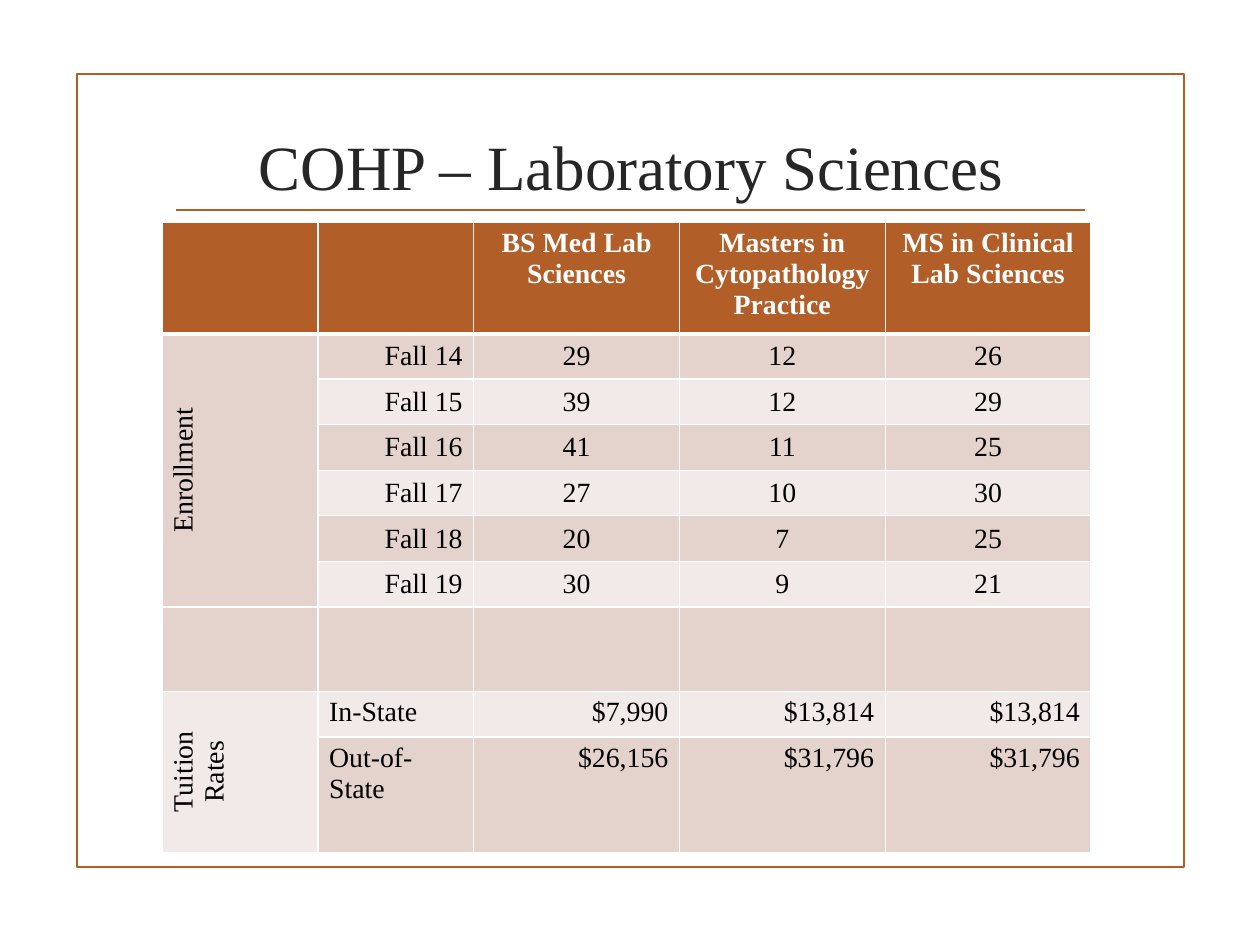
from dataclasses import dataclass

from lxml import etree
from pptx import Presentation
from pptx.dml import color
from pptx.enum import shapes, text
from pptx.oxml import ns
from pptx.util import Inches, Pt

LEFT, MID, RIGHT = text.PP_ALIGN.LEFT, text.PP_ALIGN.CENTER, text.PP_ALIGN.RIGHT
TOP, CENTER = text.MSO_ANCHOR.TOP, text.MSO_ANCHOR.MIDDLE


@dataclass(frozen=True)
class Theme:
    font: str = "Times New Roman"
    rust: str = "B15E28"
    rose: str = "E4D2CD"
    pale: str = "F2EAE8"
    white: str = "FFFFFF"
    black: str = "000000"
    ink: str = "262626"
    title: float = 40.8
    body: float = 18
    line: float = 1.25
    thin: float = 1
    thick: float = 3


@dataclass(frozen=True)
class Row:
    cells: tuple[str, ...]
    height: float
    label: text.PP_ALIGN = LEFT
    value: text.PP_ALIGN = MID
    anchor: text.MSO_ANCHOR = TOP


@dataclass(frozen=True)
class Group:
    name: str
    first: int
    last: int


THEME = Theme()
COLS = (1.4, 1.4, 1.85, 1.85, 1.85)
FALLS = (
    ("Fall 14", "29", "12", "26"),
    ("Fall 15", "39", "12", "29"),
    ("Fall 16", "41", "11", "25"),
    ("Fall 17", "27", "10", "30"),
    ("Fall 18", "20", "7", "25"),
    ("Fall 19", "30", "9", "21"),
)
ROWS = (
    Row(("", "BS Med Lab Sciences", "Masters in Cytopathology Practice",
         "MS in Clinical Lab Sciences"), 0.93),
    *(Row(fall, 0.41, RIGHT, MID, CENTER) for fall in FALLS),
    Row(("", "", "", ""), 0.76),
    Row(("In-State", "$7,990", "$13,814", "$13,814"), 0.41, value=RIGHT),
    Row(("Out-of-State", "$26,156", "$31,796", "$31,796"), 1.03, value=RIGHT),
)
GROUPS = (Group("Enrollment", 1, 6), Group("Tuition Rates", 8, 9))


def rgb(code: str) -> color.RGBColor:
    return color.RGBColor.from_string(code)


def style(para, align: text.PP_ALIGN, size: float, ink: str, bold: bool = False) -> None:
    para.alignment = align
    for run in para.runs:
        run.font.name = THEME.font
        run.font.size = Pt(size)
        run.font.bold = bold
        run.font.color.rgb = rgb(ink)


def rule(line) -> None:
    line.color.rgb = rgb(THEME.rust)
    line.width = Pt(THEME.line)


def border(cell, side: str, width: float) -> None:
    props = cell._tc.get_or_add_tcPr()
    edge = etree.SubElement(props, ns.qn(f"a:ln{side}"), w=str(Pt(width)))
    fill = etree.SubElement(edge, ns.qn("a:solidFill"))
    etree.SubElement(fill, ns.qn("a:srgbClr"), val=THEME.white)


def shade(cell, row: int) -> None:
    for side in "LRTB":
        heavy = (row, side) in ((0, "B"), (1, "T"))
        border(cell, side, THEME.thick if heavy else THEME.thin)
    cell.fill.solid()
    tint = THEME.rose if row % 2 else THEME.pale
    if row == 0:
        tint = THEME.rust
    cell.fill.fore_color.rgb = rgb(tint)


def write(cell, words: str, align: text.PP_ALIGN, anchor: text.MSO_ANCHOR,
          head: bool = False) -> None:
    cell.text_frame.text = words
    cell.vertical_anchor = anchor
    ink = THEME.white if head else THEME.black
    style(cell.text_frame.paragraphs[0], align, THEME.body, ink, head)


def frame(slide) -> None:
    box = slide.shapes.add_shape(shapes.MSO_SHAPE.RECTANGLE, Inches(0.69), Inches(0.67),
                                 Inches(9.96), Inches(7.13))
    box.shadow.inherit = False
    box.fill.background()
    rule(box.line)
    bar = slide.shapes.add_connector(shapes.MSO_CONNECTOR.STRAIGHT, Inches(1.58),
                                     Inches(1.89), Inches(9.76), Inches(1.89))
    etree.SubElement(bar._element.spPr, ns.qn("a:effectLst"))
    rule(bar.line)


def title(slide) -> None:
    box = slide.shapes.add_textbox(Inches(1.46), Inches(1.13), Inches(8.43), Inches(0.71))
    body = box.text_frame
    body.word_wrap = True
    body.vertical_anchor = CENTER
    body.text = "COHP – Laboratory Sciences"
    style(body.paragraphs[0], MID, THEME.title, THEME.ink)


def grid(slide) -> None:
    high = sum(row.height for row in ROWS)
    table = slide.shapes.add_table(len(ROWS), len(COLS), Inches(1.46), Inches(2),
                                   Inches(sum(COLS)), Inches(high)).table
    for col, width in zip(table.columns, COLS):
        col.width = Inches(width)
    for r, row in enumerate(ROWS):
        table.rows[r].height = Inches(row.height)
        for c in range(len(COLS)):
            shade(table.cell(r, c), r)
        for c, words in enumerate(row.cells, 1):
            align = row.label if c == 1 else row.value
            write(table.cell(r, c), words, align, row.anchor, r == 0)
    for group in GROUPS:
        cell = table.cell(group.first, 0)
        cell.merge(table.cell(group.last, 0))
        write(cell, group.name, MID, CENTER)
        cell._tc.get_or_add_tcPr().set("vert", "vert270")


def main() -> None:
    deck = Presentation()
    deck.slide_width, deck.slide_height = Inches(11.33), Inches(8.5)
    slide = deck.slides.add_slide(deck.slide_layouts[6])
    frame(slide)
    title(slide)
    grid(slide)
    deck.save("out.pptx")


if __name__ == "__main__":
    main()
